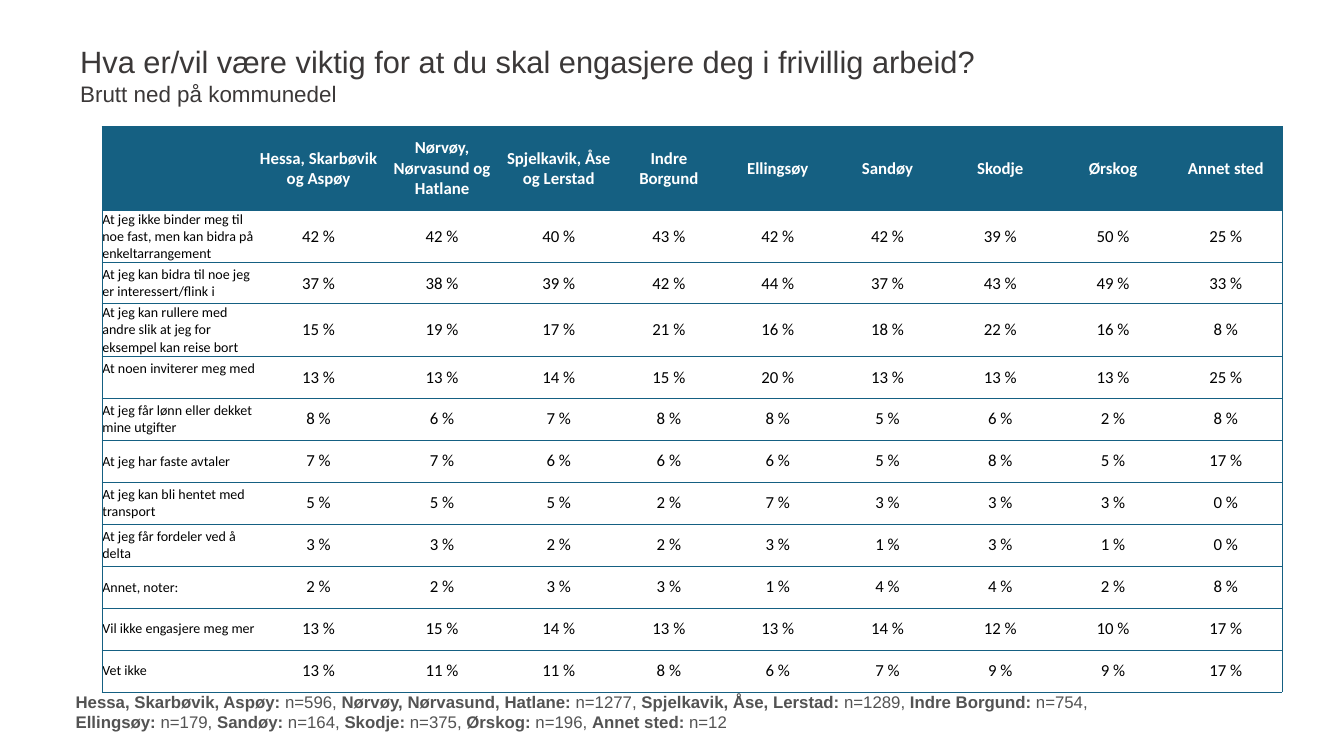
"""Builds a slide with a table of what matters for volunteering, by district."""
from lxml.etree import SubElement
from pptx import Presentation
from pptx.dml.color import RGBColor
from pptx.enum.text import MSO_ANCHOR as ANCHOR, MSO_AUTO_SIZE as AUTOSIZE, PP_ALIGN as ALIGN
from pptx.oxml.ns import qn
from pptx.util import Pt

TITLE = "Hva er/vil være viktig for at du skal engasjere deg i frivillig arbeid?"
SUBTITLE = "Brutt ned på kommunedel"
DISTRICTS = ["Hessa, Skarbøvik og Aspøy", "Nørvøy, Nørvasund og Hatlane",
             "Spjelkavik, Åse og Lerstad", "Indre\nBorgund", "Ellingsøy", "Sandøy",
             "Skodje", "Ørskog", "Annet sted"]
INVITED = "At noen inviterer meg med"
ANSWERS = [
    ("At jeg ikke binder meg til noe fast, men kan bidra på enkeltarrangement",
     (42, 42, 40, 43, 42, 42, 39, 50, 25)),
    ("At jeg kan bidra til noe jeg er interessert/flink i",
     (37, 38, 39, 42, 44, 37, 43, 49, 33)),
    ("At jeg kan rullere med andre slik at jeg for eksempel kan reise bort",
     (15, 19, 17, 21, 16, 18, 22, 16, 8)),
    (INVITED, (13, 13, 14, 15, 20, 13, 13, 13, 25)),
    ("At jeg får lønn eller dekket mine utgifter", (8, 6, 7, 8, 8, 5, 6, 2, 8)),
    ("At jeg har faste avtaler", (7, 7, 6, 6, 6, 5, 8, 5, 17)),
    ("At jeg kan bli hentet med transport", (5, 5, 5, 2, 7, 3, 3, 3, 0)),
    ("At jeg får fordeler ved å delta", (3, 3, 2, 2, 3, 1, 3, 1, 0)),
    ("Annet, noter:", (2, 2, 3, 3, 1, 4, 4, 2, 8)),
    ("Vil ikke engasjere meg mer", (13, 15, 14, 13, 13, 14, 12, 10, 17)),
    ("Vet ikke", (13, 11, 11, 8, 6, 7, 9, 9, 17)),
]
SAMPLES = [
    [("Hessa, Skarbøvik, Aspøy:", 596), ("Nørvøy, Nørvasund, Hatlane:", 1277),
     ("Spjelkavik, Åse, Lerstad:", 1289), ("Indre Borgund:", 754)],
    [("Ellingsøy:", 179), ("Sandøy:", 164), ("Skodje:", 375), ("Ørskog:", 196),
     ("Annet sted:", 12)],
]
BLUE, WHITE, BLACK, DARK, GREY = "156082", "FFFFFF", "000000", "3B3838", "535353"
COLUMN_WIDTHS = [221.6, 175.9, 177, 156.2, 158.6, 152.5] + [161.1] * 4
ROW_HEIGHTS = [119.8, 74.8, 58.6, 74.8] + [60] * 8


def style(font, size, colour, face, bold=False):
    font.size, font.name, font.bold = Pt(size), face, bold
    font.color.rgb = RGBColor.from_string(colour)


def place(shape, left, top, width, height):
    shape.left, shape.top, shape.width, shape.height = map(Pt, (left, top, width, height))
    frame = shape.text_frame
    frame.margin_left = frame.margin_right = frame.margin_top = frame.margin_bottom = Pt(4.3)
    frame.word_wrap, frame.auto_size = True, AUTOSIZE.NONE
    frame.vertical_anchor = ANCHOR.MIDDLE
    return frame


def draw_borders(cell, sides):
    properties = cell._tc.get_or_add_tcPr()
    for side in "LRTB":
        line = SubElement(properties, qn(f"a:ln{side}"), w=str(Pt(1)))
        if side in sides:
            SubElement(SubElement(line, qn("a:solidFill")), qn("a:srgbClr"), val=BLUE)
        else:
            SubElement(line, qn("a:noFill"))


def fill_cell(cell, text, row, column):
    header, label = row == 0, column == 0
    cell.text = text
    cell.vertical_anchor = ANCHOR.MIDDLE
    cell.margin_left = cell.margin_right = cell.margin_top = Pt(0.7)
    cell.margin_bottom = Pt(24 if text == INVITED else 0)
    draw_borders(cell, "TB" + "L" * label + "R" * (column == len(DISTRICTS)))
    if header or label:
        cell.fill.solid()
        cell.fill.fore_color.rgb = RGBColor.from_string(BLUE if header else WHITE)
    else:
        cell.fill.background()
    for paragraph in cell.text_frame.paragraphs:
        paragraph.alignment = ALIGN.LEFT if label else ALIGN.CENTER
        style(paragraph.font, 20 if label else 24, WHITE if header else BLACK, "Calibri", header)


def add_title(slide):
    heading = place(slide.shapes.title, 110.2, 33.8, 1703.5, 146.9)
    heading.text = f"{TITLE}\v{SUBTITLE}"
    paragraph = heading.paragraphs[0]
    paragraph.alignment = ALIGN.LEFT
    for run, size in zip(paragraph.runs, (44, 32)):
        style(run.font, size, DARK, "Arial")


def add_answers(slide):
    rows = [["", *DISTRICTS]]
    rows += [[answer, *(f"{share} %" for share in shares)] for answer, shares in ANSWERS]
    table = slide.shapes.add_table(len(rows), len(rows[0]), Pt(145.6), Pt(180.7),
                                   Pt(sum(COLUMN_WIDTHS)), Pt(sum(ROW_HEIGHTS))).table
    table.horz_banding = False
    for column, width in zip(table.columns, COLUMN_WIDTHS):
        column.width = Pt(width)
    for r, (texts, height) in enumerate(zip(rows, ROW_HEIGHTS)):
        table.rows[r].height = Pt(height)
        for c, text in enumerate(texts):
            fill_cell(table.cell(r, c), text, r, c)


def add_samples(slide):
    footnote = place(slide.shapes.add_textbox(0, 0, 0, 0), 103.7, 982.8, 1703.5, 67)
    for index, samples in enumerate(SAMPLES):
        paragraph = footnote.add_paragraph() if index else footnote.paragraphs[0]
        for position, (district, count) in enumerate(samples, 1):
            last = position == len(samples)
            ending = ("," if index == 0 else "") if last else ", "
            for text, bold in ((district, True), (f" n={count}{ending}", False)):
                run = paragraph.add_run()
                run.text = text
                style(run.font, 24, GREY, "Arial", bold)


def main():
    deck = Presentation()
    deck.slide_width, deck.slide_height = Pt(1920), Pt(1080)
    slide = deck.slides.add_slide(deck.slide_layouts[5])
    add_title(slide)
    add_answers(slide)
    add_samples(slide)
    deck.save("out.pptx")


if __name__ == "__main__":
    main()
